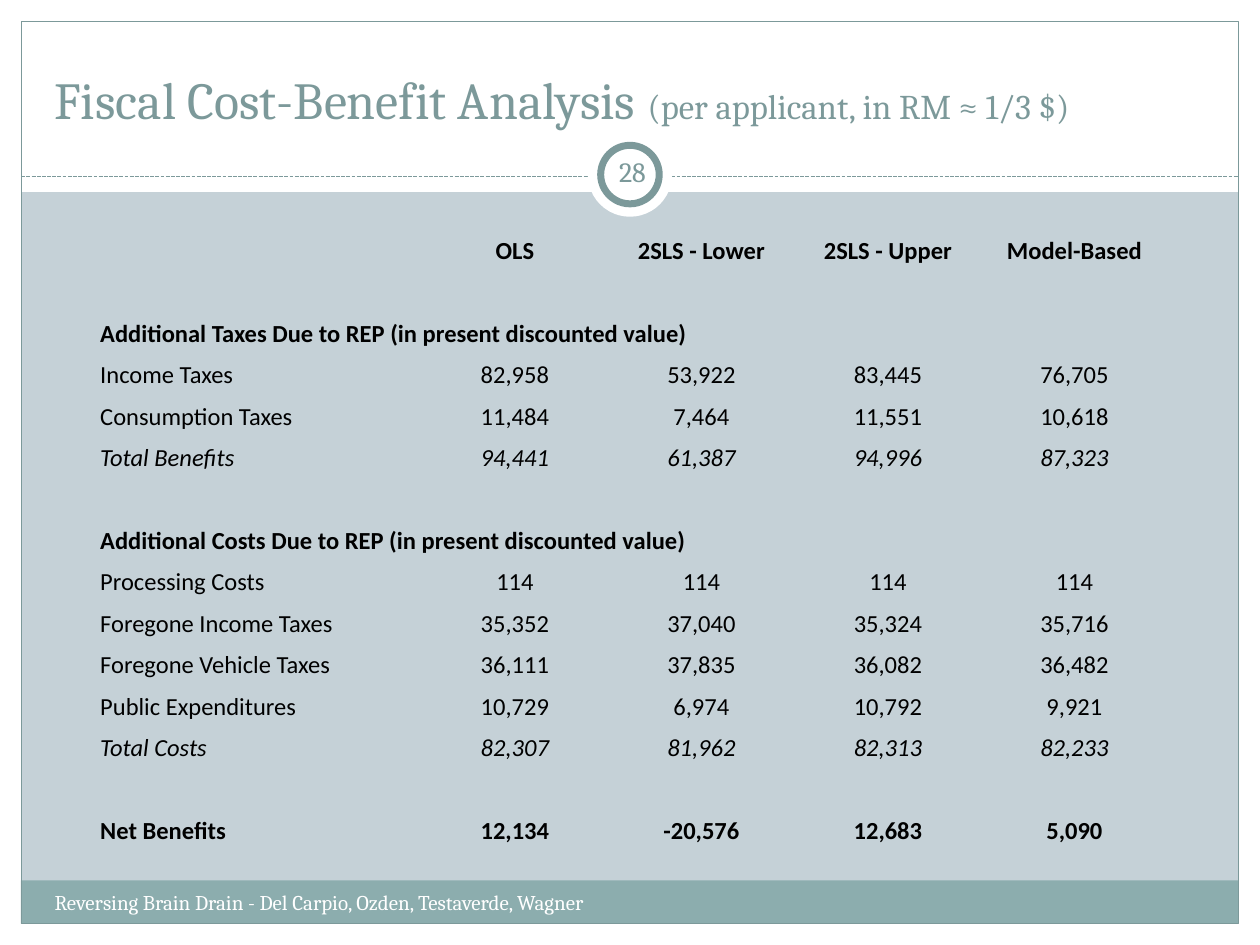
from pptx import Presentation
from pptx.dml.color import RGBColor as RGB
from pptx.enum.dml import MSO_LINE as Dash
from pptx.enum.shapes import MSO_CONNECTOR as Link, MSO_SHAPE as Kind
from pptx.enum.text import MSO_ANCHOR as Anchor, PP_ALIGN as Align
from pptx.oxml.ns import qn
from pptx.oxml.xmlchemy import OxmlElement as Node
from pptx.util import Cm, Pt


class Theme:
    back = RGB.from_string("C5D1D7")
    white = RGB.from_string("FFFFFF")
    teal = RGB.from_string("7C999A")
    band = RGB.from_string("8CADAE")
    ink = RGB.from_string("000000")
    serif, sans = "Cambria", "Calibri"
    title, sub, page, body, foot = Pt(29.7), Pt(19.8), Pt(16), Pt(14), Pt(12)
    thin, thick = Pt(0.75), Pt(4)


def draw(kind, box, fill=None, width=None):
    """Add a preset shape; box is left, top, width, height in cm."""
    shape = slide.shapes.add_shape(kind, *map(Cm, box))
    shape.shadow.inherit = False
    if fill is None:
        shape.fill.background()
    else:
        shape.fill.solid()
        shape.fill.fore_color.rgb = fill
    if width is None:
        shape.line.fill.background()
    else:
        shape.line.color.rgb = Theme.teal
        shape.line.width = width


def write(box, runs, color, anchor=Anchor.TOP, align=Align.LEFT):
    """Add a one-line text box; runs are pairs of text and size."""
    frame = slide.shapes.add_textbox(*map(Cm, box)).text_frame
    frame.word_wrap = True
    frame.vertical_anchor = anchor
    para = frame.paragraphs[0]
    para.alignment = align
    para.font.name = Theme.serif
    para.font.color.rgb = color
    for text, size in runs:
        run = para.add_run()
        run.text = text
        run.font.size = size
    return frame


deck = Presentation()
deck.slide_width, deck.slide_height = Cm(25.4), Cm(19.05)
slide = deck.slides.add_slide(deck.slide_layouts[6])
slide.background.fill.solid()
slide.background.fill.fore_color.rgb = Theme.back

# White margins, footer band and frame
for box in [(0, 18.62, 25.4, 0.43), (0, 0, 25.4, 3.87),
            (0, 0, 0.43, 19.05), (24.97, 0, 0.43, 19.05)]:
    draw(Kind.RECTANGLE, box, Theme.white)
draw(Kind.RECTANGLE, (0.42, 17.75, 24.54, 0.87), Theme.band)
draw(Kind.RECTANGLE, (0.43, 0.43, 24.54, 18.19), width=Theme.thin)

# Dashed rule with the page badge
rule = slide.shapes.add_connector(
    Link.STRAIGHT, Cm(0.43), Cm(3.56), Cm(24.97), Cm(3.56))
rule.line.color.rgb = Theme.teal
rule.line.width = Theme.thin
rule.line.dash_style = Dash.SQUARE_DOT
rule._element.spPr.append(Node("a:effectLst"))
draw(Kind.OVAL, (11.85, 2.67, 1.7, 1.7), Theme.white)
draw(Kind.OVAL, (12.11, 2.93, 1.18, 1.18), Theme.white, Theme.thick)

write((0.85, 0.64, 23.7, 2.1),
      [("Fiscal Cost-Benefit Analysis ", Theme.title),
       ("(per applicant, in RM ≈ 1/3 $)", Theme.sub)],
      Theme.teal, Anchor.BOTTOM)

# Each row: style, then label and values
rows = [
    ("bold", "", "OLS", "2SLS - Lower", "2SLS - Upper", "Model-Based"),
    ("plain",),
    ("bold", "Additional Taxes Due to REP (in present discounted value)"),
    ("plain", "Income Taxes", "82,958", "53,922", "83,445", "76,705"),
    ("plain", "Consumption Taxes", "11,484", "7,464", "11,551", "10,618"),
    ("italic", "Total Benefits", "94,441", "61,387", "94,996", "87,323"),
    ("plain",),
    ("bold", "Additional Costs Due to REP (in present discounted value)"),
    ("plain", "Processing Costs", "114", "114", "114", "114"),
    ("plain", "Foregone Income Taxes", "35,352", "37,040", "35,324", "35,716"),
    ("plain", "Foregone Vehicle Taxes", "36,111", "37,835", "36,082", "36,482"),
    ("plain", "Public Expenditures", "10,729", "6,974", "10,792", "9,921"),
    ("italic", "Total Costs", "82,307", "81,962", "82,313", "82,233"),
    ("plain",),
    ("bold", "Net Benefits", "12,134", "-20,576", "12,683", "5,090"),
]
table = slide.shapes.add_table(
    len(rows), 5, Cm(2), Cm(4.52), Cm(21.54), Cm(12.54)).table
table.first_row = table.horz_banding = False
no_grid = "{2D5ABB26-0587-4C30-8999-92F81FD0307C}"
table._tbl.tblPr.find(qn("a:tableStyleId")).text = no_grid
for c, col in enumerate(table.columns):
    col.width = Cm(3.76 if c else 6.5)

for r, (style, *texts) in enumerate(rows):
    if len(texts) == 1:
        table.cell(r, 0).merge(table.cell(r, 3))
    for c in range(5):
        cell = table.cell(r, c)
        cell.fill.background()
        cell.vertical_anchor = Anchor.BOTTOM
        cell.margin_left = cell.margin_right = cell.margin_top = Cm(0.02)
        cell.margin_bottom = 0
        para = cell.text_frame.paragraphs[0]
        if c < len(texts) and texts[c]:
            para.text = texts[c]
        para.alignment = Align.CENTER if c else Align.LEFT
        font = para.font
        font.name, font.size = Theme.sans, Theme.body
        font.color.rgb = Theme.ink
        font.bold, font.italic = style == "bold", style == "italic"

write((0.85, 17.8, 13.75, 1.02),
      [("Reversing Brain Drain - Del Carpio, Ozden, Testaverde, Wagner",
        Theme.foot)], Theme.white)
page = write((12.11, 2.85, 1.28, 1.22), [("28", Theme.page)],
             Theme.teal, Anchor.MIDDLE, Align.CENTER)
page.margin_left = page.margin_right = Cm(0.13)

deck.save("out.pptx")
